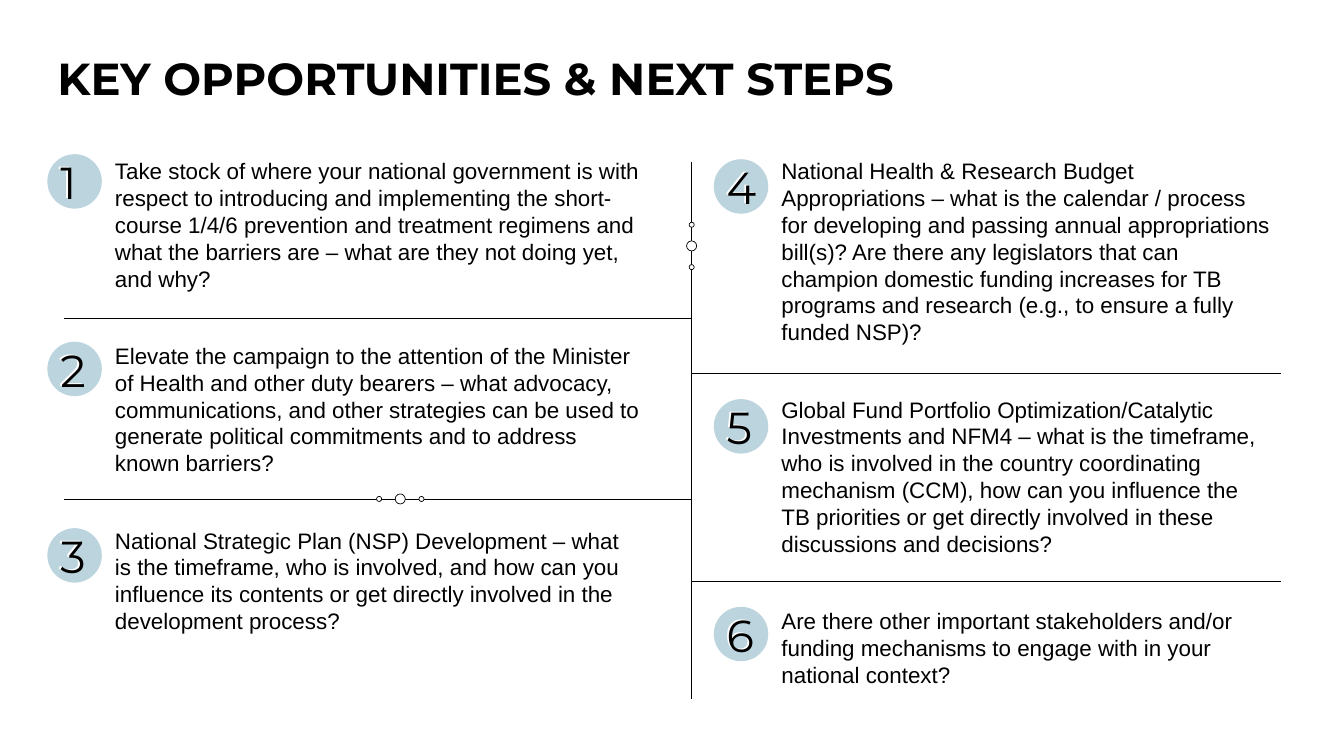
from lxml import etree
from pptx import Presentation
from pptx.dml.color import RGBColor
from pptx.enum import shapes as sh, text as tx
from pptx.oxml.ns import qn
from pptx.util import Inches, Pt

BLACK = RGBColor(0, 0, 0)
WHITE = RGBColor(255, 255, 255)
BLUE = RGBColor(0xBB, 0xD4, 0xDD)
HEAD = {"name": "Montserrat", "size": Pt(32)}
BODY = {"name": "Arial", "size": Pt(16)}
TOP = {"word_wrap": True, "vertical_anchor": tx.MSO_ANCHOR.TOP}

LEFT = [
    "Take stock of where your national government is with respect to introducing and implementing the short-course 1/4/6 prevention and treatment regimens and what the barriers are – what are they not doing yet, and why?",
    "Elevate the campaign to the attention of the Minister of Health and other duty bearers – what advocacy, communications, and other strategies can be used to generate political commitments and to address known barriers?",
    "National Strategic Plan (NSP) Development – what is the timeframe, who is involved, and how can you influence its contents or get directly involved in the development process?",
]
RIGHT = [
    "National Health & Research Budget Appropriations – what is the calendar / process for developing and passing annual appropriations bill(s)? Are there any legislators that can champion domestic funding increases for TB programs and research (e.g., to ensure a fully funded NSP)?",
    "Global Fund Portfolio Optimization/Catalytic Investments and NFM4 – what is the timeframe, who is involved in the country coordinating mechanism (CCM), how can you influence the TB priorities or get directly involved in these discussions and decisions?",
    "Are there other important stakeholders and/or funding mechanisms to engage with in your national context?",
]


def style(obj, form):
    for key, val in form.items():
        setattr(obj, key, val)


def place(shape, *box):
    sides = ("left", "top", "width", "height")
    style(shape, dict(zip(sides, map(Inches, box))))


def title(shape, box, words):
    place(shape, *box)
    frame = shape.text_frame
    frame.text = words
    style(frame, {**TOP, "auto_size": tx.MSO_AUTO_SIZE.NONE})
    para = frame.paragraphs[0]
    style(para, {"alignment": tx.PP_ALIGN.LEFT, "line_spacing": 0.9})
    style(para.runs[0].font, {**HEAD, "bold": True})
    para.runs[0].font.color.rgb = BLACK


def steps(shape, box, items):
    place(shape, *box)
    frame = shape.text_frame
    frame.text = "\n".join(items)
    style(frame, {**TOP, "auto_size": tx.MSO_AUTO_SIZE.SHAPE_TO_FIT_TEXT})
    for para in frame.paragraphs:
        style(para, {"space_before": Pt(0), "space_after": Pt(36),
                     "line_spacing": 1.0})
        style(para.runs[0].font, BODY)
        para.runs[0].font.color.rgb = BLACK
        props = para._p.get_or_add_pPr()
        props.set("marL", "0")
        props.set("indent", "0")
        etree.SubElement(props, qn("a:buNone"))


def disc(group, left, top, size, fill):
    oval = group.shapes.add_shape(sh.MSO_SHAPE.OVAL, *map(Inches, (left, top, size, size)))
    oval.shadow.inherit = False
    oval.fill.solid()
    oval.fill.fore_color.rgb = fill
    return oval


def digit(group, left, top, words):
    box = group.shapes.add_textbox(*map(Inches, (left, top, 0.4, 0.64)))
    box.text_frame.word_wrap = False
    run = box.text_frame.paragraphs[0].add_run()
    run.text = words
    style(run.font, HEAD)
    return run


def badge(slide, left, top, num):
    """Blue disc with a white digit behind an outlined one."""
    group = slide.shapes.add_group_shape()
    disc(group, left, top, 0.54, BLUE).line.fill.background()
    digit(group, left + 0.01, top - 0.05, num).font.color.rgb = WHITE
    font = digit(group, left + 0.03, top - 0.04, num).font
    font.fill.background()
    edge = etree.Element(qn("a:ln"), w=str(Pt(0.75)))
    fill = etree.SubElement(edge, qn("a:solidFill"))
    etree.SubElement(fill, qn("a:srgbClr"), val=str(BLACK))
    font._element.insert(0, edge)


def rule(group, *ends):
    line = group.shapes.add_connector(sh.MSO_CONNECTOR.STRAIGHT, *map(Inches, ends))
    line.line.color.rgb = BLACK
    line.line.width = Pt(0.5)
    etree.SubElement(line._element.spPr, qn("a:effectLst"))


def beads(group, x, y, dx, dy):
    """Three rings centred on x, y; the outer two stand off by dx, dy."""
    for step, size in ((-1, 0.05), (1, 0.05), (0, 0.1)):
        ring = disc(group, x + step * dx - size / 2, y + step * dy - size / 2, size, WHITE)
        ring.line.color.rgb = BLACK
        ring.line.width = Pt(0.5)


def grid(slide, left, mid, right, top, foot):
    group = slide.shapes.add_group_shape()
    rule(group, mid, top, mid, foot)
    for y in (3.16, 4.95):
        rule(group, left, y, mid, y)
    for y in (3.7, 5.77):
        rule(group, mid, y, right, y)
    beads(group, mid, 2.44, 0, 0.21)
    beads(group, 3.97, 4.95, 0.21, 0)


def main():
    deck = Presentation()
    style(deck, {"slide_width": Inches(13.33), "slide_height": Inches(7.5)})
    slide = deck.slides.add_slide(deck.slide_layouts[3])
    head, left, right = slide.placeholders
    title(head, (0.47, 0.51, 10.04, 0.79), "KEY OPPORTUNITIES & NEXT STEPS")
    steps(left, (1.04, 1.51, 5.41, 4.88), LEFT)
    steps(right, (7.65, 1.51, 5.05, 5.42), RIGHT)
    spots = [(0.47, y) for y in (1.53, 3.39, 5.24)]
    spots += [(7.08, y) for y in (1.58, 3.96, 6.02)]
    for num, (x, y) in enumerate(spots, 1):
        badge(slide, x, y, str(num))
    grid(slide, 0.63, 6.86, 12.71, 1.61, 6.93)
    deck.save("out.pptx")


if __name__ == "__main__":
    main()
